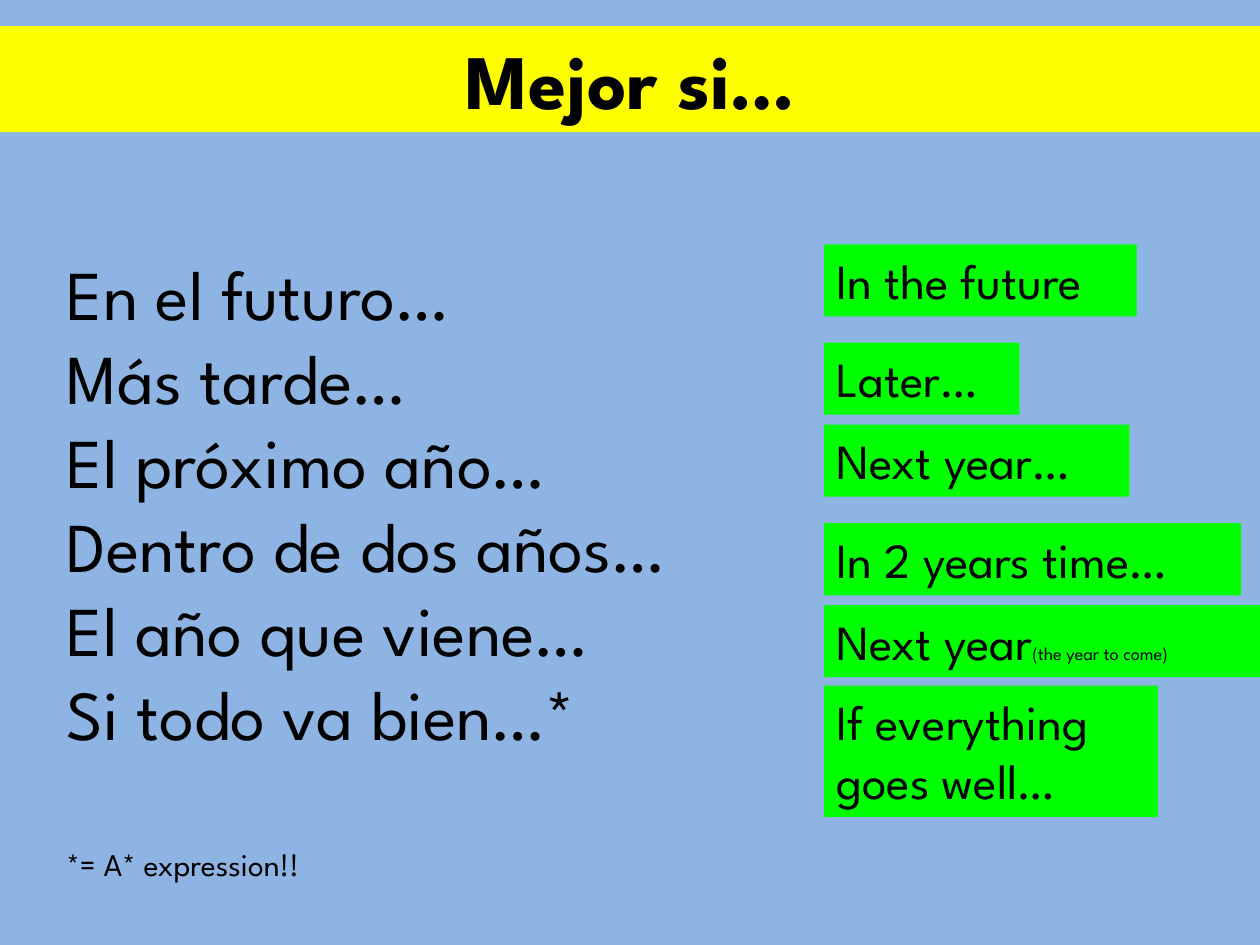
import pptx
import pptx.dml.color
import pptx.enum.shapes
import pptx.enum.text
import pptx.util

Pt = pptx.util.Pt
ALIGN = pptx.enum.text.PP_ALIGN


def color(hex_string):
    return pptx.dml.color.RGBColor.from_string(hex_string)


class SlideBuilder:
    font_name = "League Spartan"
    text_color = "000000"

    def __init__(self, slide, background):
        self.slide = slide
        slide.background.fill.solid()
        slide.background.fill.fore_color.rgb = color(background)

    def add_paragraphs(self, shape, paragraphs, bold=False, align=ALIGN.LEFT):
        """Each paragraph is a list of (text, size) runs."""
        frame = shape.text_frame
        frame.word_wrap = True
        frame.vertical_anchor = pptx.enum.text.MSO_ANCHOR.TOP
        for index, runs in enumerate(paragraphs):
            paragraph = frame.add_paragraph() if index else frame.paragraphs[0]
            paragraph.alignment = align
            for text, size in runs:
                run = paragraph.add_run()
                run.text = text
                run.font.name = self.font_name
                run.font.size = Pt(size)
                run.font.bold = bold
                run.font.color.rgb = color(self.text_color)

    def text(self, left, top, width, height, paragraphs):
        shape = self.slide.shapes.add_textbox(Pt(left), Pt(top), Pt(width), Pt(height))
        self.add_paragraphs(shape, paragraphs)

    def panel(self, left, top, width, height, fill, paragraphs, **style):
        shape = self.slide.shapes.add_shape(
            pptx.enum.shapes.MSO_SHAPE.RECTANGLE,
            Pt(left), Pt(top), Pt(width), Pt(height))
        shape.shadow.inherit = False
        shape.fill.solid()
        shape.fill.fore_color.rgb = color(fill)
        shape.line.fill.background()
        self.add_paragraphs(shape, paragraphs, **style)


def main():
    presentation = pptx.Presentation()
    presentation.slide_width = Pt(720)
    presentation.slide_height = Pt(540)
    slide = presentation.slides.add_slide(presentation.slide_layouts[6])
    builder = SlideBuilder(slide, "8EB4E3")

    # Title band
    builder.panel(0, 15, 720, 60.5, "FFFF00", [[("Mejor si…", 44)]],
                  bold=True, align=ALIGN.CENTER)

    # Spanish phrases
    phrases = ["En el futuro…", "Más tarde…", "El próximo año…",
               "Dentro de dos años…", "El año que viene…", "Si todo va bien…*"]
    builder.text(31, 139.7, 440, 298, [[(phrase, 40)] for phrase in phrases])

    # English translations: top, width, height, paragraphs
    translations = [
        (139.7, 178.6, 41.2, [[("In the future", 28)]]),
        (195.8, 111.6, 41.2, [[("Later…", 28)]]),
        (242.6, 174.5, 41.2, [[("Next year…", 28)]]),
        (299, 238.3, 41.2, [[("In 2 years time…", 28)]]),
        (345.8, 249.1, 41.2, [[("Next year", 28), ("(the year to come)", 10.5)]]),
        (391.8, 190.8, 75, [[("If everything", 28)], [("goes well…", 28)]]),
    ]
    for top, width, height, paragraphs in translations:
        builder.panel(470.9, top, width, height, "00FF00", paragraphs)

    # Footnote
    builder.text(31, 479.5, 166.3, 29, [[("*= A* expression!!", 18)]])

    presentation.save("out.pptx")


if __name__ == "__main__":
    main()
